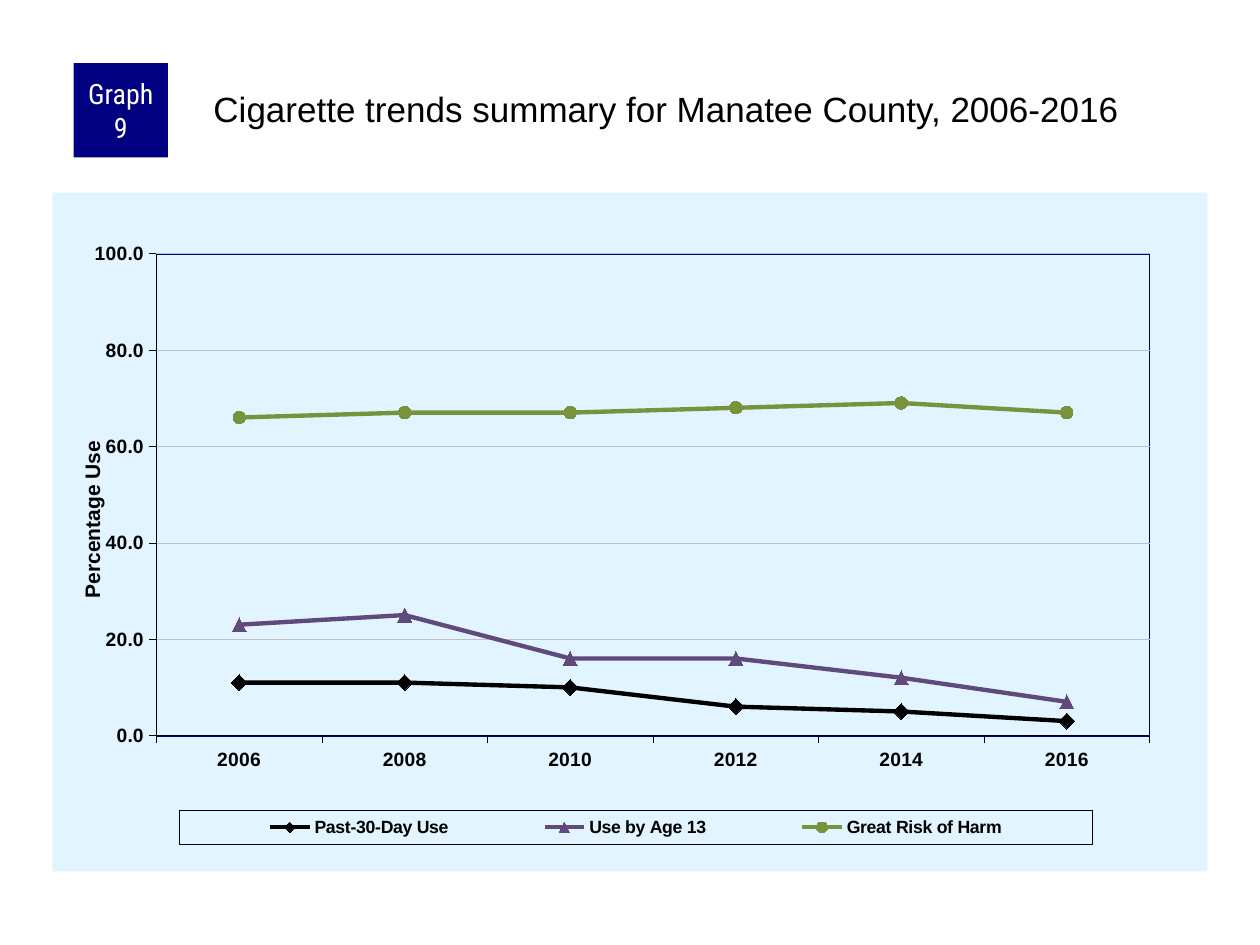
import pptx
import pptx.chart.data
import pptx.dml.color
import pptx.enum.chart
import pptx.enum.shapes
import pptx.enum.text
import pptx.oxml
import pptx.oxml.ns
import pptx.util

Pt = pptx.util.Pt
RGBColor = pptx.dml.color.RGBColor
qn = pptx.oxml.ns.qn

NAVY = RGBColor(0x00, 0x00, 0x80)
WHITE = RGBColor(0xFF, 0xFF, 0xFF)
BLACK = RGBColor(0x00, 0x00, 0x00)
PALE_BLUE = RGBColor(0xE1, 0xF4, 0xFF)
SILVER = RGBColor(0xC0, 0xC0, 0xC0)
PURPLE = RGBColor(0x60, 0x4A, 0x7B)
GREEN = RGBColor(0x77, 0x93, 0x3C)


def set_layout(element, index, target="", **fractions):
    """Place a chart part by fractions of the chart area."""
    for old in element.findall(qn("c:layout")):
        element.remove(old)
    tags = f'<c:layoutTarget val="{target}"/>' if target else ""
    tags += "".join(f'<c:{key}Mode val="edge"/>' for key in "xy")
    tags += "".join(f'<c:{key} val="{value}"/>' for key, value in fractions.items())
    element.insert(index, pptx.oxml.parse_xml(
        f'<c:layout {pptx.oxml.ns.nsdecls("c")}>'
        f'<c:manualLayout>{tags}</c:manualLayout></c:layout>'))


def box_properties(fill=None, line=None, width=0.25):
    """Return a c:spPr element with a solid or empty fill and outline."""
    def paint(color):
        return (f'<a:solidFill><a:srgbClr val="{color}"/></a:solidFill>'
                if color is not None else "<a:noFill/>")
    return pptx.oxml.parse_xml(
        f'<c:spPr {pptx.oxml.ns.nsdecls("c", "a")}>{paint(fill)}'
        f'<a:ln w="{Pt(width)}">{paint(line)}</a:ln></c:spPr>')


deck = pptx.Presentation()
deck.slide_width, deck.slide_height = Pt(720), Pt(540)
slide = deck.slides.add_slide(deck.slide_layouts[6])

# Graph number
badge = slide.shapes.add_shape(
    pptx.enum.shapes.MSO_SHAPE.RECTANGLE, Pt(42), Pt(36), Pt(54), Pt(54))
badge.shadow.inherit = False
badge.fill.solid()
badge.fill.fore_color.rgb = NAVY
badge.line.fill.background()
badge_text = badge.text_frame
badge_text.word_wrap = True
badge_text.vertical_anchor = pptx.enum.text.MSO_ANCHOR.MIDDLE
badge_text.margin_left = badge_text.margin_right = Pt(3.6)
badge_text.margin_top = badge_text.margin_bottom = 0
badge_text.paragraphs[0].alignment = pptx.enum.text.PP_ALIGN.CENTER
number = badge_text.paragraphs[0].add_run()
number.text = "Graph 9"
number.font.size = Pt(16)
number.font.name = "Roboto Condensed"
number.font.color.rgb = WHITE

# Heading
heading = slide.shapes.add_textbox(Pt(120), Pt(48), Pt(570), Pt(60)).text_frame
heading.word_wrap = True
heading.margin_left = heading.margin_top = Pt(2)
heading.margin_right = heading.margin_bottom = 0
title = heading.paragraphs[0].add_run()
title.text = "Cigarette trends summary for Manatee County, 2006-2016"
title.font.size = Pt(20)
title.font.name = "Arial"
title.font.color.rgb = BLACK

# Trend chart
MARKER = pptx.enum.chart.XL_MARKER_STYLE
trends = [
    ("Past-30-Day Use", (11, 11, 10, 6, 5, 3), BLACK, MARKER.DIAMOND, 9),
    ("Use by Age 13", (23, 25, 16, 16, 12, 7), PURPLE, MARKER.TRIANGLE, 8),
    ("Great Risk of Harm", (66, 67, 67, 68, 69, 67), GREEN, MARKER.CIRCLE, 7),
]
survey = pptx.chart.data.CategoryChartData(number_format="0.0")
survey.categories = [str(year) for year in range(2006, 2017, 2)]
for name, percentages, *_ in trends:
    survey.add_series(name, percentages)

chart = slide.shapes.add_chart(
    pptx.enum.chart.XL_CHART_TYPE.LINE_MARKERS,
    Pt(30), Pt(110), Pt(660), Pt(388), survey).chart
chart.has_title = False
chart.font.size = Pt(8)
chart.font.name = "Arial"
chart.font.color.rgb = BLACK
chart.plots[0].vary_by_categories = False

for series, (_, _, color, marker, size) in zip(chart.plots[0].series, trends):
    series.smooth = False
    series.format.line.color.rgb = color
    series.format.line.width = Pt(2.5)
    series.marker.style = marker
    series.marker.size = size
    series.marker.format.fill.solid()
    series.marker.format.fill.fore_color.rgb = color
    series.marker.format.line.color.rgb = color

years, percent = chart.category_axis, chart.value_axis
for axis in (years, percent):
    axis.major_tick_mark = pptx.enum.chart.XL_TICK_MARK.OUTSIDE
    axis.minor_tick_mark = pptx.enum.chart.XL_TICK_MARK.NONE
    axis.format.line.color.rgb = BLACK
    axis.format.line.width = Pt(0.25)
    axis.tick_labels.font.size = Pt(11)
    axis.tick_labels.font.bold = True
    axis.tick_labels.font.name = "Arial"
    axis.tick_labels.font.color.rgb = BLACK

percent.minimum_scale, percent.maximum_scale, percent.major_unit = 0, 100, 20
percent.tick_labels.number_format = "0.0"
percent.tick_labels.number_format_is_linked = False
percent.major_gridlines.format.line.color.rgb = SILVER
percent.major_gridlines.format.line.width = Pt(0.25)
percent_title = percent.axis_title.text_frame.paragraphs[0].add_run()
percent_title.text = "Percentage Use"
percent_title.font.size = Pt(12)
percent_title.font.bold = True
percent_title.font.name = "Arial"
percent_title.font.color.rgb = BLACK

chart.has_legend = True
legend = chart.legend
legend.position = pptx.enum.chart.XL_LEGEND_POSITION.RIGHT
legend.include_in_layout = False
legend.font.size = Pt(10.1)
legend.font.bold = True
legend.font.name = "Arial"
legend.font.color.rgb = BLACK

# Chart backgrounds, borders and placement
chart_space = chart.element
plot_area = chart_space.find(".//" + qn("c:plotArea"))
chart_space.find(qn("c:txPr")).addprevious(box_properties(fill=PALE_BLUE))
plot_area.append(box_properties(line=NAVY, width=1))
legend_element = chart_space.find(".//" + qn("c:legend"))
legend_element.find(qn("c:txPr")).addprevious(box_properties(line=BLACK))

set_layout(plot_area, 0, "inner", x=0.09, y=0.09, w=0.86, h=0.71)
set_layout(legend_element, 1, x=0.11, y=0.91, w=0.79, h=0.05)
title_element = chart_space.find(".//" + qn("c:valAx") + "/" + qn("c:title"))
set_layout(title_element, 1, x=0.02, y=0.36)

deck.save("out.pptx")
